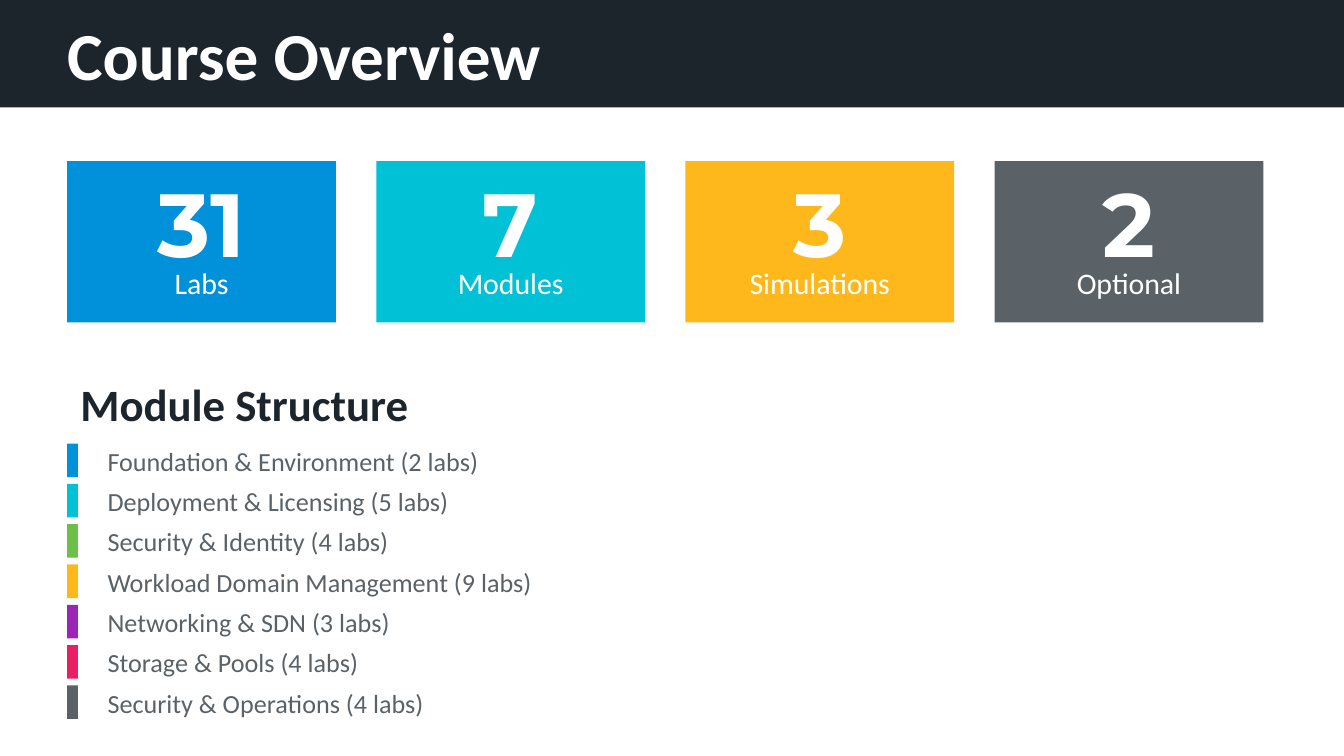
from pptx import Presentation
from pptx import util as u
from pptx.dml.color import RGBColor
from pptx.enum import shapes, text
from pptx.oxml.ns import qn
from lxml import etree

NAVY = RGBColor(0x1D, 0x25, 0x2C)
WHITE = RGBColor(0xFF, 0xFF, 0xFF)
BLUE = RGBColor(0x00, 0x91, 0xDA)
CYAN = RGBColor(0x00, 0xC1, 0xD5)
AMBER = RGBColor(0xFF, 0xB8, 0x1C)
GREY = RGBColor(0x5A, 0x62, 0x68)
GREEN = RGBColor(0x6C, 0xC0, 0x4A)
PURPLE = RGBColor(0x9B, 0x26, 0xB6)
PINK = RGBColor(0xE9, 0x1E, 0x63)

# Content
TITLE = "Course Overview"
HEADING = "Module Structure"
STATS = [
    ("31", "Labs", BLUE),
    ("7", "Modules", CYAN),
    ("3", "Simulations", AMBER),
    ("2", "Optional", GREY),
]
MODULES = [
    ("Foundation & Environment (2 labs)", BLUE),
    ("Deployment & Licensing (5 labs)", CYAN),
    ("Security & Identity (4 labs)", GREEN),
    ("Workload Domain Management (9 labs)", AMBER),
    ("Networking & SDN (3 labs)", PURPLE),
    ("Storage & Pools (4 labs)", PINK),
    ("Security & Operations (4 labs)", GREY),
]

# Layout in px, 200 to the inch
PX = 4572
WIDE, HIGH = 2000, 1125
LEFT = 100
CARD_W, CARD_H, CARD_TOP, CARD_GAP = 400, 240, 240, 60
ROW_TOP, ROW_H, ROW_STEP = 660, 50, 60

deck = Presentation()
deck.slide_width, deck.slide_height = WIDE * PX, HIGH * PX
slide = deck.slides.add_slide(deck.slide_layouts[1])
title, body = slide.placeholders


def block(x, y, w, h, color):
    box = slide.shapes.add_shape(shapes.MSO_SHAPE.RECTANGLE,
                                 x * PX, y * PX, w * PX, h * PX)
    box.shadow.inherit = False
    box.fill.solid()
    box.fill.fore_color.rgb = color
    box.line.fill.background()
    return box


def place(box, x, y, w, h):
    box.left, box.top, box.width, box.height = (n * PX for n in (x, y, w, h))
    frame = box.text_frame
    frame.word_wrap = True
    frame.auto_size = text.MSO_AUTO_SIZE.NONE
    frame.vertical_anchor = text.MSO_ANCHOR.MIDDLE
    return frame


def style(para, size, color, bold=False, face="Calibri", align="LEFT"):
    para.alignment = text.PP_ALIGN[align]
    font = para.font
    font.size, font.bold, font.name = u.Pt(size), bold, face
    font.color.rgb = color


def label(words, x, y, w, h, *look, **more):
    frame = place(slide.shapes.add_textbox(0, 0, 0, 0), x, y, w, h)
    frame.text = words
    style(frame.paragraphs[0], *look, **more)


# Title on its band, with the band sent to the back
band = block(0, 0, WIDE, 160, NAVY)
slide.shapes._spTree.insert(2, band._element)
frame = place(title, LEFT, 30, 1800, 100)
frame.margin_left = frame.margin_right = 0
frame.margin_top = frame.margin_bottom = 0
frame.text = TITLE
style(frame.paragraphs[0], 36, WHITE, True)

# Stat cards
for i, (count, name, color) in enumerate(STATS):
    x = LEFT + i * (CARD_W + CARD_GAP)
    block(x, CARD_TOP, CARD_W, CARD_H, color)
    label(count, x, CARD_TOP + 40, CARD_W, 100, 48, WHITE, True,
          face="Montserrat", align="CENTER")
    label(name, x, CARD_TOP + 150, CARD_W, 60, 16, WHITE, align="CENTER")

# Module list, one line per colour marker
label(HEADING, LEFT, 560, 1800, 80, 24, NAVY, True)
frame = place(body, 140, ROW_TOP - 11, 1760, ROW_STEP * len(MODULES))
frame.margin_top = frame.margin_bottom = 0
frame.text = "\n".join(name for name, color in MODULES)
for i, (para, (name, color)) in enumerate(zip(frame.paragraphs, MODULES)):
    block(LEFT, ROW_TOP + i * ROW_STEP, 16, ROW_H, color)
    para.line_spacing = u.Emu(ROW_STEP * PX)
    para.space_before = u.Pt(0)
    props = para._p.get_or_add_pPr()
    props.set("marL", "0")
    props.set("indent", "0")
    etree.SubElement(props, qn("a:buNone"))
    style(para, 14, GREY)

deck.save("out.pptx")
